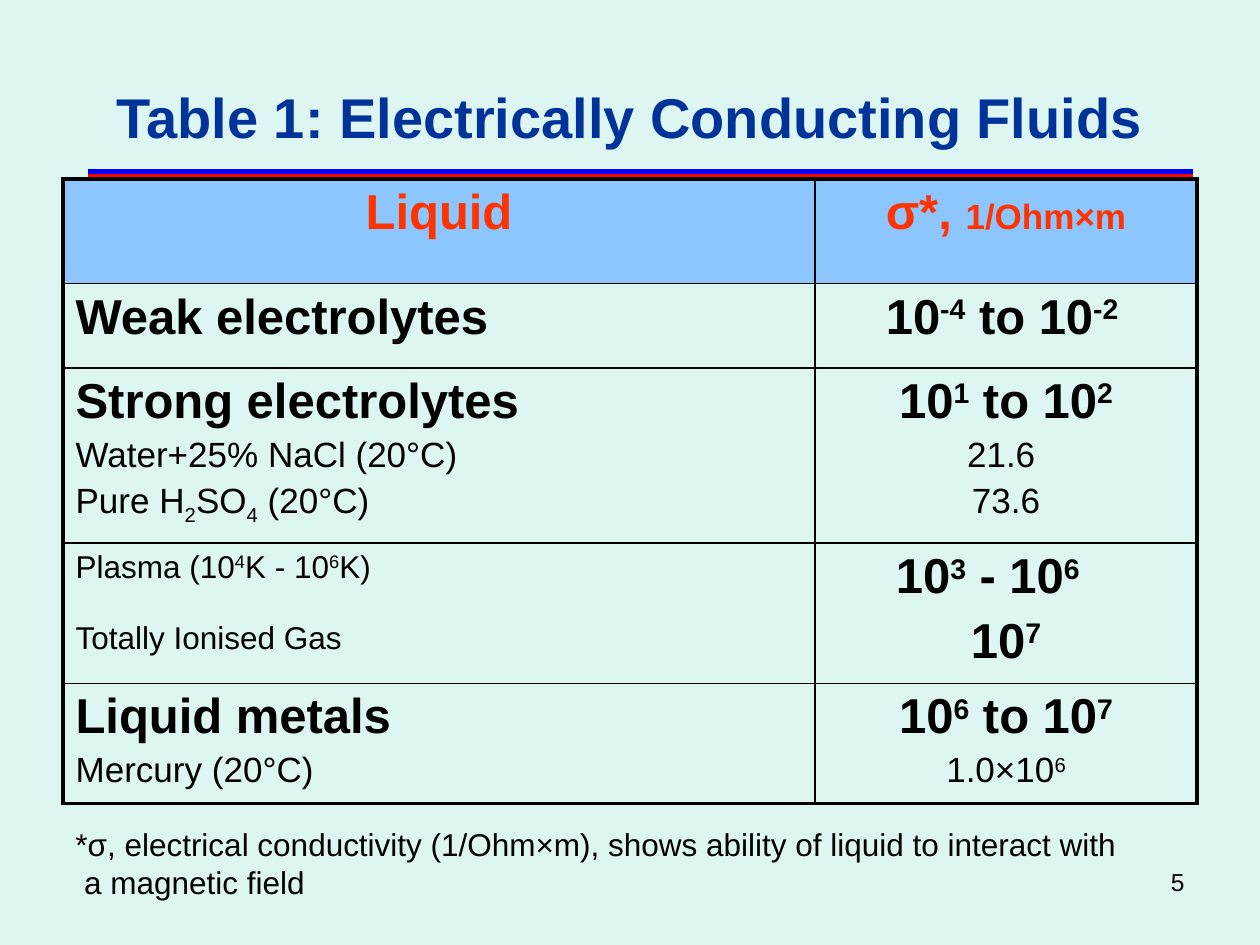
from lxml import etree
from pptx import Presentation
from pptx.dml.color import RGBColor
from pptx.enum.shapes import MSO_CONNECTOR
from pptx.enum.text import MSO_ANCHOR, MSO_AUTO_SIZE, PP_ALIGN
from pptx.oxml.ns import qn
from pptx.util import Inches, Pt

LEFT, CENTER, RIGHT = PP_ALIGN.LEFT, PP_ALIGN.CENTER, PP_ALIGN.RIGHT
MIDDLE = MSO_ANCHOR.MIDDLE
FIT_SHAPE = MSO_AUTO_SIZE.SHAPE_TO_FIT_TEXT
STRAIGHT = MSO_CONNECTOR.STRAIGHT

BACKGROUND = RGBColor(0xDE, 0xF6, 0xF1)
NAVY = RGBColor(0x00, 0x33, 0x99)
BLACK = RGBColor(0x00, 0x00, 0x00)
ORANGE = RGBColor(0xFF, 0x33, 0x00)
HEADER_BLUE = RGBColor(0x8D, 0xC6, 0xFF)
RULE_COLORS = [RGBColor(0x00, 0x00, 0xFF), RGBColor(0xFF, 0x00, 0x00),
               RGBColor(0x00, 0x80, 0x00)]

FONT = "Arial"
SUPERSCRIPT, SUBSCRIPT = 30000, -25000
OUTER_BORDER, INNER_BORDER = Pt(2.25), Pt(1)
COLUMN_WIDTHS = [5.97, 3.03]
ROW_HEIGHTS = [0.83, 0.67, 0.83, 1.05, 0.82]

HEADING = dict(size=28, bold=True)
DETAIL = dict(size=20)
PLASMA = dict(size=18, before=0)
LABEL = dict(color=ORANGE, align=CENTER)

# One list of (text, format) lines per cell; text between bars is shifted.
HEADERS = [[("Liquid", HEADING | LABEL)], [("σ*, ", HEADING | LABEL)]]
LIQUIDS = [
    ([("Weak electrolytes", HEADING)],
     [("10|-4| to 10|-2 |", HEADING | dict(align=CENTER))]),
    ([("Strong electrolytes", HEADING),
      ("Water+25% NaCl (20°C)", DETAIL),
      ("Pure H|2|SO|4| (20°C)", DETAIL | dict(shift=SUBSCRIPT))],
     [("10|1| to 10|2|", HEADING | dict(align=CENTER)),
      ("21.6 ", DETAIL | dict(align=CENTER)),
      ("73.6", DETAIL | dict(align=CENTER))]),
    ([("Plasma (10|4|K - 10|6|K)", PLASMA),
      ("Totally Ionised Gas", PLASMA | dict(before=20.7))],
     [("10|3| - 10|6|", HEADING | dict(indent=0.54)),
      ("10|7|", HEADING | dict(align=CENTER))]),
    ([("Liquid metals", HEADING), ("Mercury (20°C)", DETAIL)],
     [("10|6| to 10|7|", HEADING | dict(align=CENTER)),
      ("1.0×10|6|", DETAIL | dict(align=CENTER))]),
]


def write(paragraph, text, size, bold=False, color=BLACK, align=LEFT,
          before=None, indent=0, shift=SUPERSCRIPT):
    """Append text; pieces between bars are raised or lowered by shift."""
    paragraph.alignment = align
    paragraph.space_before = Pt(0.2 * size if before is None else before)
    if indent:
        properties = paragraph._p.get_or_add_pPr()
        properties.set("marL", str(Inches(indent)))
        properties.set("indent", "0")
    for index, piece in enumerate(text.split("|")):
        if not piece:
            continue
        run = paragraph.add_run()
        run.text = piece
        run.font.name = FONT
        run.font.size = Pt(size)
        run.font.bold = bold
        run.font.color.rgb = color
        if index % 2:
            run._r.get_or_add_rPr().set("baseline", str(shift))


def write_lines(frame, lines):
    for index, (text, style) in enumerate(lines):
        paragraph = frame.add_paragraph() if index else frame.paragraphs[0]
        write(paragraph, text, **style)


def set_borders(cell, widths):
    properties = cell._tc.get_or_add_tcPr()
    for side, width in widths.items():
        line = etree.SubElement(properties, qn(f"a:ln{side}"), w=str(width))
        fill = etree.SubElement(line, qn("a:solidFill"))
        etree.SubElement(fill, qn("a:srgbClr"), val=str(BLACK))


def place_title(slide, left, top, width, height):
    title = slide.shapes.title
    title.left, title.top = Inches(left), Inches(top)
    title.width, title.height = Inches(width), Inches(height)
    title.text_frame.vertical_anchor = MIDDLE
    write(title.text_frame.paragraphs[0], "Table 1: Electrically Conducting Fluids",
          size=32, bold=True, color=NAVY, align=CENTER, before=0)


def add_title_rules(slide, left, top, width, height):
    group = slide.shapes.add_group_shape()
    gap = height / (len(RULE_COLORS) - 1)
    for index, color in enumerate(RULE_COLORS):
        y = Inches(top + index * gap)
        rule = group.shapes.add_connector(STRAIGHT, Inches(left), y,
                                          Inches(left + width), y)
        rule.line.color.rgb = color
        rule.line.width = Pt(3)
        etree.SubElement(rule._element.spPr, qn("a:effectLst"))


def add_fluids_table(slide, left, top):
    rows = [HEADERS, *LIQUIDS]
    table = slide.shapes.add_table(
        len(rows), len(COLUMN_WIDTHS), Inches(left), Inches(top),
        Inches(sum(COLUMN_WIDTHS)), Inches(sum(ROW_HEIGHTS))).table
    table.horz_banding = False
    for column, width in zip(table.columns, COLUMN_WIDTHS):
        column.width = Inches(width)
    for row, height in zip(table.rows, ROW_HEIGHTS):
        row.height = Inches(height)

    last_row, last_column = len(rows) - 1, len(COLUMN_WIDTHS) - 1
    for r, row in enumerate(rows):
        for c, lines in enumerate(row):
            cell = table.cell(r, c)
            write_lines(cell.text_frame, lines)
            on_edge = {"L": c == 0, "R": c == last_column,
                       "T": r == 0, "B": r == last_row}
            set_borders(cell, {side: OUTER_BORDER if outer else INNER_BORDER
                               for side, outer in on_edge.items()})
            if r == 0:
                cell.fill.solid()
                cell.fill.fore_color.rgb = HEADER_BLUE
            else:
                cell.fill.background()
    unit_paragraph = table.cell(0, last_column).text_frame.paragraphs[0]
    write(unit_paragraph, "1/Ohm×m", size=20, bold=True, before=5.6, **LABEL)


def add_footnote(slide, left, top, width, height):
    frame = slide.shapes.add_textbox(Inches(left), Inches(top),
                                     Inches(width), Inches(height)).text_frame
    frame.word_wrap = False
    frame.auto_size = FIT_SHAPE
    frame.vertical_anchor = MIDDLE
    style = dict(size=18, before=0)
    write_lines(frame, [
        ("*σ, electrical conductivity (1/Ohm×m), shows ability of liquid to interact with",
         style),
        (" a magnetic field", style)])


def add_slide_number(slide, left, top, width, height):
    frame = slide.shapes.add_textbox(Inches(left), Inches(top),
                                     Inches(width), Inches(height)).text_frame
    frame.word_wrap = True
    write(frame.paragraphs[0], "5", size=14, align=RIGHT, before=0)


def main():
    deck = Presentation()
    deck.slide_width, deck.slide_height = Inches(10), Inches(7.5)
    slide = deck.slides.add_slide(deck.slide_layouts[5])
    slide.background.fill.solid()
    slide.background.fill.fore_color.rgb = BACKGROUND

    add_slide_number(slide, 7.17, 6.83, 2.33, 0.52)
    place_title(slide, 0.5, 0.3, 9, 1.25)
    add_title_rules(slide, 0.7, 1.36, 8.77, 0.09)
    add_fluids_table(slide, 0.5, 1.42)
    add_footnote(slide, 0.5, 6.5, 9.18, 0.7)
    deck.save("out.pptx")


if __name__ == "__main__":
    main()
